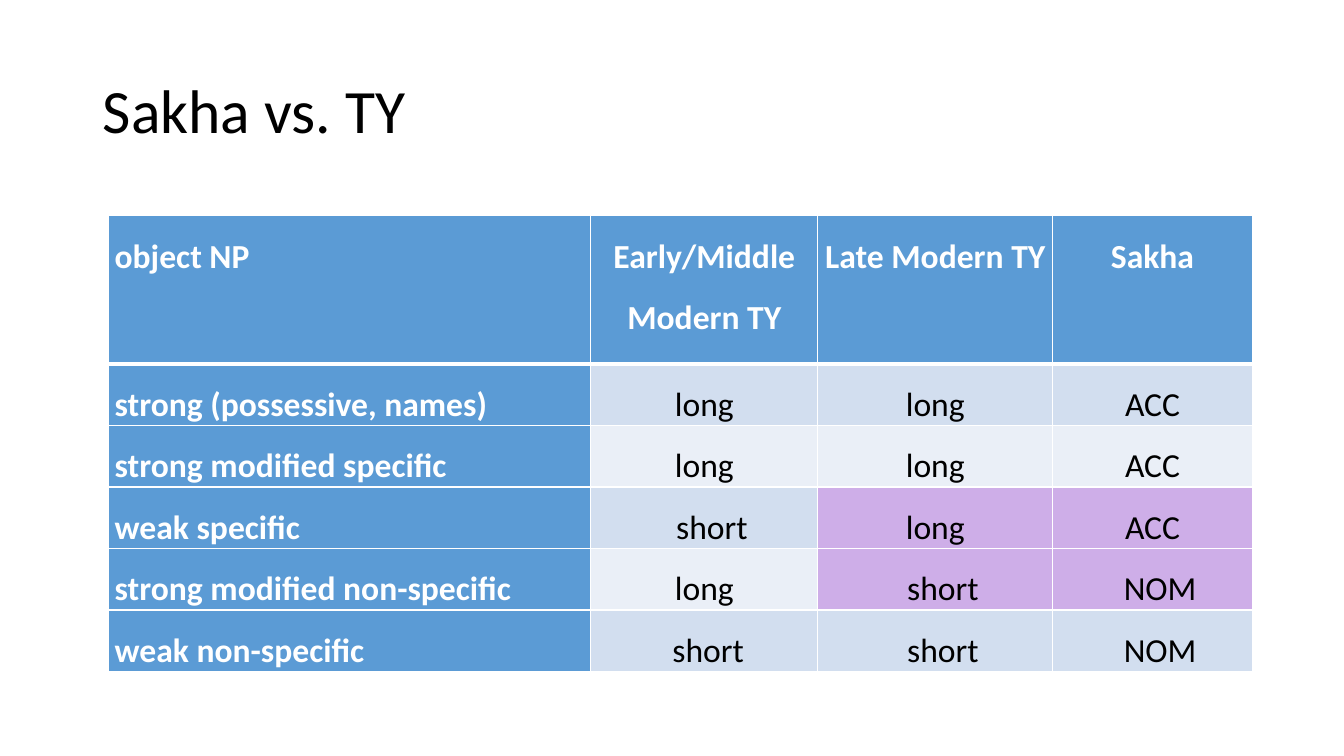
from lxml import etree
from pptx import Presentation
from pptx.dml.color import RGBColor
from pptx.enum.text import MSO_ANCHOR, PP_ALIGN
from pptx.oxml.ns import qn
from pptx.util import Cm, Pt

LEFT, CENTER = PP_ALIGN.LEFT, PP_ALIGN.CENTER
MIDDLE, TOP = MSO_ANCHOR.MIDDLE, MSO_ANCHOR.TOP

BLACK, WHITE = "000000", "FFFFFF"
BLUE, PURPLE = "5B9BD5", "CEAEE8"
BANDS = ["D2DEEF", "EAEFF7"]

COLUMN_WIDTHS = [12.17, 5.72, 5.92, 5.03]
ROW_HEIGHTS = [3.73] + [1.55] * 5
CELL_MARGIN = 0.17
SPACE_WIDTH = 0.19

ROWS = [
    ["object NP", "Early/Middle Modern TY", "Late Modern TY", "Sakha"],
    ["strong (possessive, names)", "long", "long", "ACC"],
    ["strong modified specific", "long", "long", "ACC"],
    ["weak specific", "short", "long", "ACC"],
    ["strong modified non-specific", "long", "short", "NOM"],
    ["weak non-specific", "short", "short", "NOM"],
]
HIGHLIGHTED = {(3, 2), (3, 3), (4, 2), (4, 3)}
# Extra left inset, counted in widths of a space
INDENTS = {(3, 1): 2, (4, 2): 2, (4, 3): 2, (5, 1): 1, (5, 2): 2, (5, 3): 2}


def write_text(paragraph, text, size, color, bold, paragraph_format):
    run = paragraph.add_run()
    run.text = text
    run.font.color.rgb = RGBColor.from_string(color)
    for name, value in {"name": "Calibri", "size": Pt(size), "bold": bold}.items():
        setattr(run.font, name, value)
    for name, value in paragraph_format.items():
        setattr(paragraph, name, value)


def add_border(cell, side, width):
    properties = cell._tc.get_or_add_tcPr()
    line = etree.SubElement(properties, qn(f"a:ln{side}"), w=str(Pt(width)))
    fill = etree.SubElement(line, qn("a:solidFill"))
    etree.SubElement(fill, qn("a:srgbClr"), val=WHITE)


presentation = Presentation()
presentation.slide_width = Cm(33.87)
presentation.slide_height = Cm(19.05)
slide = presentation.slides.add_slide(presentation.slide_layouts[6])

title = slide.shapes.add_textbox(Cm(2.34), Cm(1.02), Cm(29.21), Cm(3.68))
title.text_frame.word_wrap = True
title.text_frame.vertical_anchor = MIDDLE
write_text(title.text_frame.paragraphs[0], "Sakha vs. TY", 44, BLACK, False,
           {"alignment": LEFT, "line_spacing": 0.9})

table = slide.shapes.add_table(
    len(ROWS), len(COLUMN_WIDTHS), Cm(2.72), Cm(5.44),
    Cm(sum(COLUMN_WIDTHS)), Cm(sum(ROW_HEIGHTS))).table
table.horz_banding = False
for column, width in zip(table.columns, COLUMN_WIDTHS):
    column.width = Cm(width)
for row, height in zip(table.rows, ROW_HEIGHTS):
    row.height = Cm(height)

for row_index, texts in enumerate(ROWS):
    for column_index, text in enumerate(texts):
        position = (row_index, column_index)
        cell = table.cell(*position)
        is_heading = row_index == 0 or column_index == 0

        indent = INDENTS.get(position, 0) * SPACE_WIDTH
        cell_format = {
            "margin_left": Cm(CELL_MARGIN + indent),
            "margin_right": Cm(CELL_MARGIN),
            "margin_top": 0,
            "margin_bottom": 0,
            "vertical_anchor": TOP,
        }
        for name, value in cell_format.items():
            setattr(cell, name, value)

        border_widths = {"L": 1, "R": 1,
                         "T": 3 if row_index == 1 else 1,
                         "B": 3 if row_index == 0 else 1}
        for side, width in border_widths.items():
            add_border(cell, side, width)

        if is_heading:
            background = BLUE
        elif position in HIGHLIGHTED:
            background = PURPLE
        else:
            background = BANDS[(row_index - 1) % 2]
        cell.fill.solid()
        cell.fill.fore_color.rgb = RGBColor.from_string(background)

        write_text(cell.text_frame.paragraphs[0], text, 24,
                   WHITE if is_heading else BLACK, is_heading,
                   {"alignment": CENTER if column_index else LEFT,
                    "line_spacing": 1.5, "space_after": Pt(8)})

presentation.save("out.pptx")
